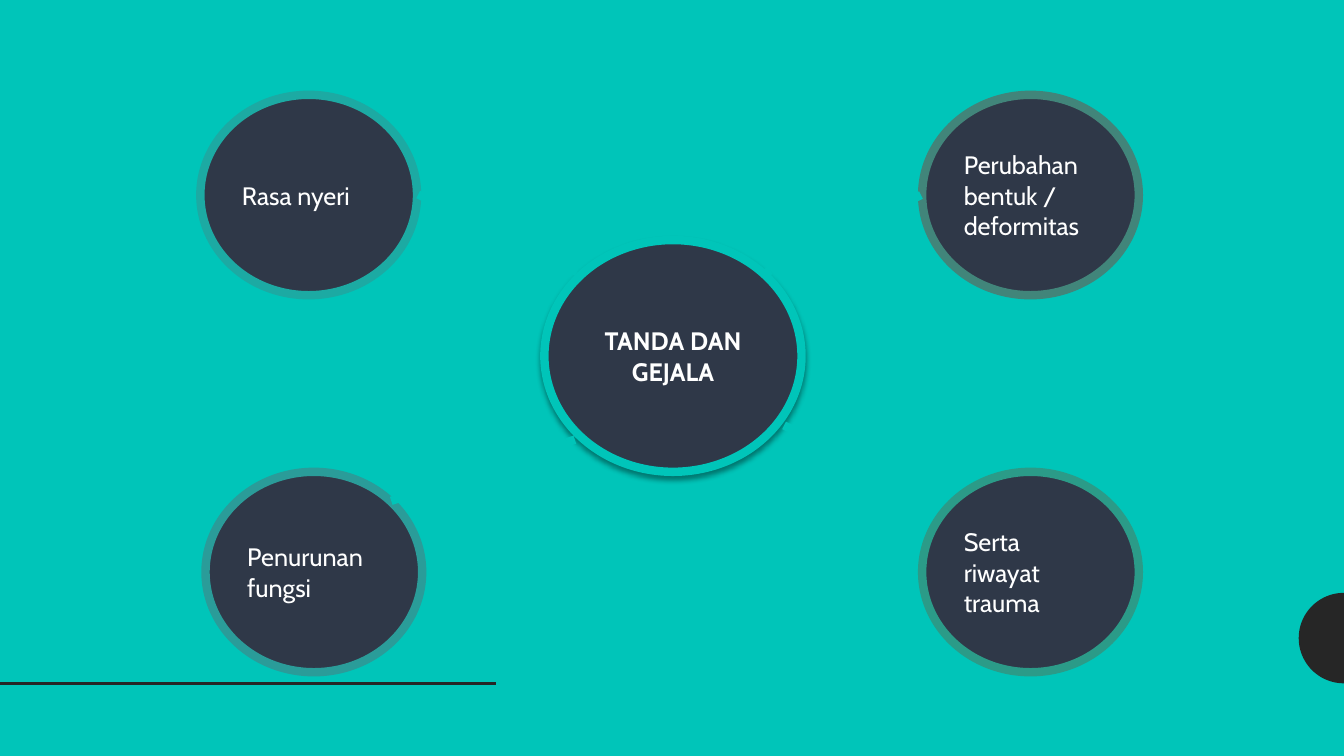
import math
from dataclasses import dataclass

import pptx
import pptx.dml.color
import pptx.enum.dml
import pptx.enum.shapes
import pptx.enum.text
import pptx.oxml
import pptx.oxml.ns
import pptx.util
from pptx.util import Cm


@dataclass(frozen=True)
class Theme:
    background: str = "00C5B9"
    circle: str = "2F3848"
    decoration: str = "262626"
    text: str = "FFFFFF"
    font: str = "Cabin"
    text_size: int = 18
    ring_width: int = 6
    rule_width: int = 2


THEME = Theme()
SLIDE_WIDTH, SLIDE_HEIGHT = 33.87, 19.05
RULE_TOP = 17.22
CENTER_BOX = (13.72, 6.05, 6.48, 5.84)
SYMPTOM_WIDTH, SYMPTOM_HEIGHT = 5.46, 5.05
UPPER, LOWER = 2.39, 11.89
RIGHT = 23.24
SYMPTOMS = [
    ("Rasa nyeri", 5.05, UPPER, "1CAAA3"),
    ("Penurunan fungsi", 5.18, LOWER, "2A9C99"),
    ("Serta riwayat trauma", RIGHT, LOWER, "2B9B88"),
    ("Perubahan bentuk / deformitas", RIGHT, UPPER, "41857A"),
]
LINKS = [
    (10.54, 4.9, 14.66, 6.91),
    (19.76, 10.72, 23.88, 12.73),
    (9.86, 12.62, 14.66, 11.02),
    (19.23, 6.91, 23.24, 4.9),
]


def color(value):
    return pptx.dml.color.RGBColor.from_string(value)


def paint(fill, value):
    fill.solid()
    fill.fore_color.rgb = color(value)


def write(shape, text, alignment, bold=False):
    frame = shape.text_frame
    frame.word_wrap = True
    frame.auto_size = pptx.enum.text.MSO_AUTO_SIZE.NONE
    frame.vertical_anchor = pptx.enum.text.MSO_ANCHOR.MIDDLE
    paragraph = frame.paragraphs[0]
    paragraph.alignment = alignment
    paragraph.line_spacing = 1.0
    run = paragraph.add_run()
    run.text = text
    run.font.name = THEME.font
    run.font.size = pptx.util.Pt(THEME.text_size)
    run.font.bold = bold
    run.font.color.rgb = color(THEME.text)


def add_circle(slide, box, ring):
    shape = slide.shapes.add_shape(
        pptx.enum.shapes.MSO_SHAPE.FLOWCHART_CONNECTOR, *map(Cm, box))
    shape.shadow.inherit = False
    paint(shape.fill, THEME.circle)
    shape.line.color.rgb = color(ring)
    shape.line.width = pptx.util.Pt(THEME.ring_width)
    return shape


def add_drop_shadow(shape):
    effects = shape._element.spPr.find(pptx.oxml.ns.qn("a:effectLst"))
    effects.append(pptx.oxml.parse_xml(
        f'<a:outerShdw {pptx.oxml.ns.nsdecls("a")} blurRad="50800" dist="38100"'
        ' dir="5400000" algn="t" rotWithShape="0"><a:srgbClr val="000000">'
        '<a:alpha val="40000"/></a:srgbClr></a:outerShdw>'))


def add_line(slide, ends, value, width, dash=None):
    line = slide.shapes.add_connector(
        pptx.enum.shapes.MSO_CONNECTOR.STRAIGHT, *map(Cm, ends))
    line.line.color.rgb = color(value)
    line.line.width = pptx.util.Pt(width)
    if dash is not None:
        line.line.dash_style = dash
    line._element.spPr.append(
        pptx.oxml.parse_xml(f'<a:effectLst {pptx.oxml.ns.nsdecls("a")}/>'))


def add_edge_half_disc(slide, center_y, radius, steps=48):
    """Draw the left half of a disc against the right edge of the slide."""
    angles = [math.pi * (0.5 + step / steps) for step in range(steps + 1)]
    points = [(Cm(SLIDE_WIDTH + radius * math.cos(angle)),
               Cm(center_y + radius * math.sin(angle))) for angle in angles]
    builder = slide.shapes.build_freeform(*points[0])
    builder.add_line_segments(points[1:], close=True)
    shape = builder.convert_to_shape()
    shape.shadow.inherit = False
    paint(shape.fill, THEME.decoration)
    shape.line.fill.background()


def add_central_title(slide, text):
    """Lay the title placeholder over the square inscribed in the central circle."""
    add_drop_shadow(add_circle(slide, CENTER_BOX, THEME.background))
    left, top, width, height = CENTER_BOX
    margin = (1 - math.sqrt(0.5)) / 2
    title = slide.shapes.title
    title.left, title.top = Cm(left + margin * width), Cm(top + margin * height)
    title.width, title.height = Cm(width * math.sqrt(0.5)), Cm(height * math.sqrt(0.5))
    write(title, text, pptx.enum.text.PP_ALIGN.CENTER, bold=True)
    slide.shapes._spTree.append(title._element)


def main():
    presentation = pptx.Presentation()
    presentation.slide_width = Cm(SLIDE_WIDTH)
    presentation.slide_height = Cm(SLIDE_HEIGHT)
    title_only = presentation.slide_layouts[5]
    slide = presentation.slides.add_slide(title_only)
    paint(slide.background.fill, THEME.background)

    add_edge_half_disc(slide, center_y=16.08, radius=1.14)
    add_line(slide, (0, RULE_TOP, 12.5, RULE_TOP), THEME.decoration, THEME.rule_width)
    add_central_title(slide, "TANDA DAN GEJALA")
    for text, left, top, ring in SYMPTOMS:
        circle = add_circle(slide, (left, top, SYMPTOM_WIDTH, SYMPTOM_HEIGHT), ring)
        write(circle, text, pptx.enum.text.PP_ALIGN.LEFT)
    for ends in LINKS:
        add_line(slide, ends, THEME.background, THEME.ring_width,
                 pptx.enum.dml.MSO_LINE.ROUND_DOT)

    presentation.save("out.pptx")


if __name__ == "__main__":
    main()
